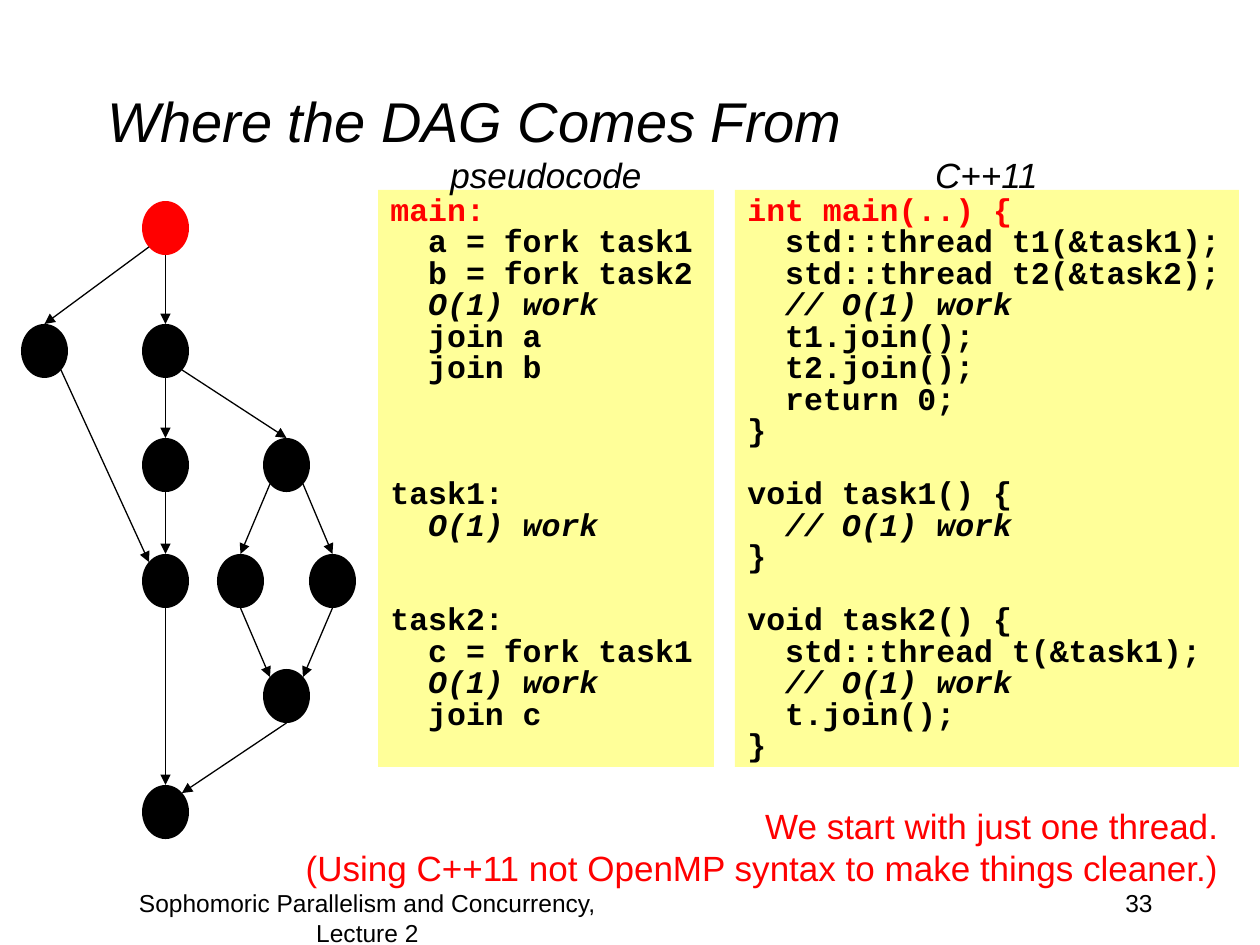
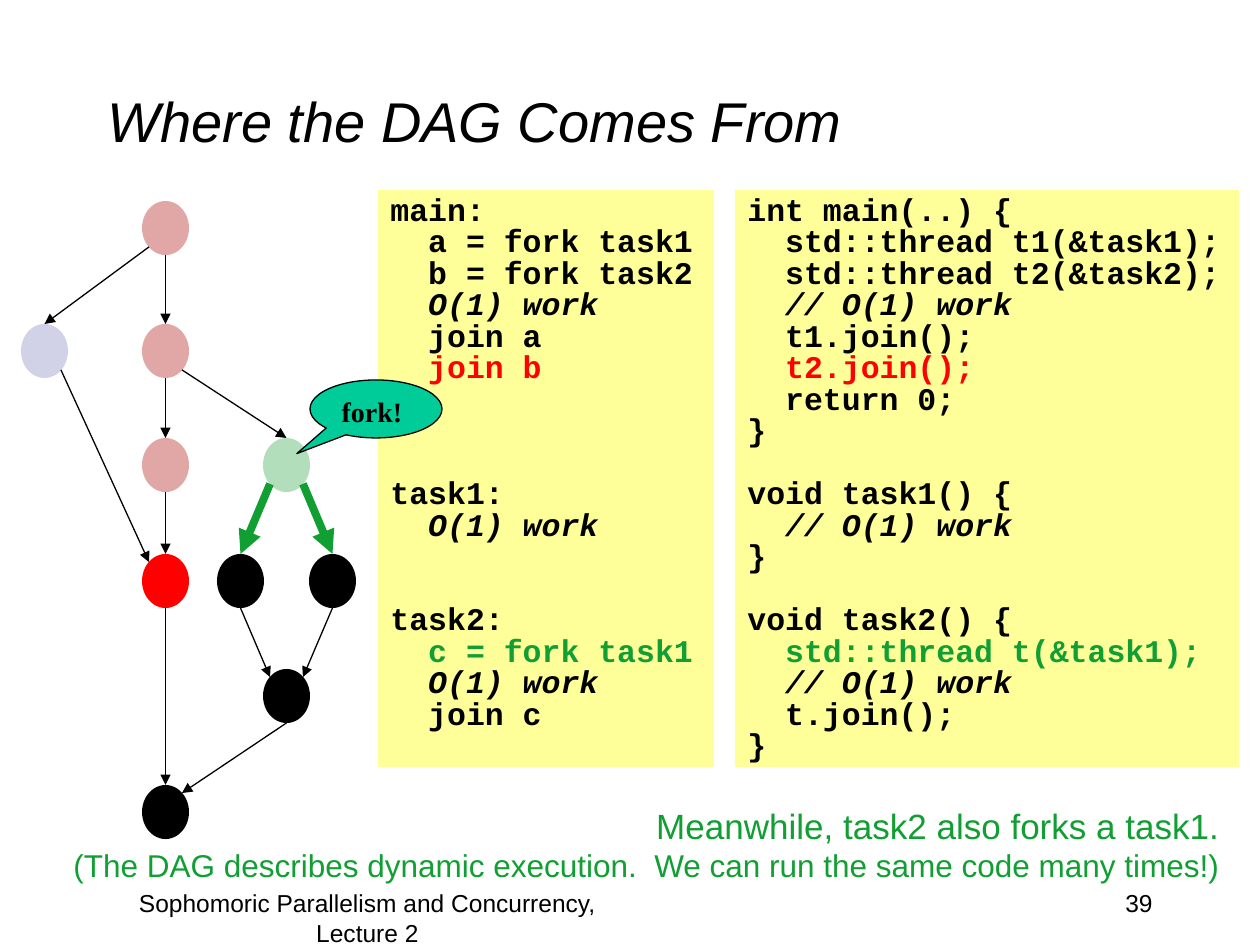
from pptx import Presentation
from pptx.dml.color import RGBColor
from pptx.enum.shapes import MSO_CONNECTOR, MSO_SHAPE
from pptx.enum.text import MSO_ANCHOR, PP_ALIGN
from pptx.oxml.ns import qn
from pptx.util import Emu, Pt
from lxml.etree import SubElement

PX = 914400 / 126
COLORS = {
    "black": "000000", "red": "FF0000", "green": "119F33", "code": "FFFF99",
    "done main": "E1A7A7", "done task1": "D1D1E7", "done task2": "B2DEBC",
    "callout": "00CC99",
}
CODE_SIZE = 18
INDENT = Pt(21.6)  # two Courier New characters at 18 pt

# Code panels: (left, width, code); blank lines become paragraph spacing
PANELS = [
    (378, 336, """main:
  a = fork task1
  b = fork task2
  O(1) work
  join a
  join b



task1:
  O(1) work


task2:
  c = fork task1
  O(1) work
  join c"""),
    (735, 504, """int main(..) {
  std::thread t1(&task1);
  std::thread t2(&task2);
  // O(1) work
  t1.join();
  t2.join();
  return 0;
}

void task1() {
  // O(1) work
}

void task2() {
  std::thread t(&task1);
  // O(1) work
  t.join();
}"""),
]

# DAG: left and top of each node, and where an edge can touch a node
NODE_WIDTH, NODE_HEIGHT = 47, 54
NODES = {
    "main": (142, 201), "fork b": (142, 324), "task1": (21, 324),
    "work": (142, 438), "join a": (142, 554), "join b": (142, 785),
    "task2": (263, 438), "task2 work": (217, 554), "inner task1": (309, 554),
    "join c": (263, 669),
}
SITES = {
    "top": (0.5, 0), "bottom": (0.5, 1), "top left": (0.15, 0.15),
    "top right": (0.85, 0.15), "bottom left": (0.15, 0.85),
    "bottom right": (0.85, 0.85),
}
EDGES = [
    ("main", "bottom left", "task1", "top"),
    ("main", "bottom", "fork b", "top"),
    ("task1", "bottom right", "join a", "top left"),
    ("fork b", "bottom", "work", "top"),
    ("work", "bottom", "join a", "top"),
    ("join a", "bottom", "join b", "top"),
    ("fork b", "bottom right", "task2", "top"),
    ("task2", "bottom left", "task2 work", "top"),
    ("task2", "bottom right", "inner task1", "top"),
    ("task2 work", "bottom", "join c", "top left"),
    ("inner task1", "bottom", "join c", "top right"),
    ("join c", "bottom", "join b", "top right"),
]

# What differs from slide to slide
STEPS = [
    {
        "number": "33",
        "nodes": {"main": "red"},
        "bold edges from": None,
        "code": {"main:": "red", "int main(..) {": "red"},
        "caption": [("We start with just one thread.", 20),
                    ("(Using C++11 not OpenMP syntax to make things cleaner.)", 20)],
        "caption box": (287, 798, 944, 97),
        "caption color": "red",
        "headings": [("pseudocode", (437, 147, 218, 55)), ("C++11", (922, 147, 129, 55))],
        "callout": None,
    },
    {
        "number": "39",
        "nodes": {"main": "done main", "fork b": "done main", "work": "done main",
                  "task1": "done task1", "task2": "done task2", "join a": "red"},
        "bold edges from": "task2",
        "code": {"join b": "red", "t2.join();": "red",
                 "c = fork task1": "green", "std::thread t(&task1);": "green"},
        "caption": [("Meanwhile, task2 also forks a task1.", 20),
                    ("(The DAG describes dynamic execution.  "
                     "We can run the same code many times!)", 18)],
        "caption box": (21, 798, 1211, 93),
        "caption color": "green",
        "headings": [],
        "callout": "fork!",
    },
]


def add_block(slide, box, kind=None, fill=None):
    """Add a text box, or a filled preset shape when a kind is given."""
    place = [Emu(round(value * PX)) for value in box]
    if kind is None:
        shape = slide.shapes.add_textbox(*place)
    else:
        shape = slide.shapes.add_shape(kind, *place)
        shape.shadow.inherit = False
        shape.fill.solid()
        shape.fill.fore_color.rgb = RGBColor.from_string(COLORS[fill])
        shape.line.fill.background()
    shape.text_frame.word_wrap = True
    shape.text_frame.vertical_anchor = MSO_ANCHOR.TOP
    return shape


def add_line(shape, text, size, color="black", align=PP_ALIGN.LEFT,
             font="Arial", italic=False, bold=False):
    """Write one paragraph, using the empty first one if it is free."""
    frame = shape.text_frame
    paragraph = frame.add_paragraph() if frame.text else frame.paragraphs[0]
    paragraph.text = text
    paragraph.alignment = align
    paragraph.font.name = font
    paragraph.font.size = Pt(size)
    paragraph.font.italic = italic
    paragraph.font.bold = bold
    paragraph.font.color.rgb = RGBColor.from_string(COLORS[color])
    return paragraph


presentation = Presentation()
presentation.slide_width = Emu(round(1260 * PX))
presentation.slide_height = Emu(round(945 * PX))

for step in STEPS:
    slide = presentation.slides.add_slide(presentation.slide_layouts[6])

    # Title and footer
    title = add_block(slide, (95, 42, 1071, 157))
    title.text_frame.vertical_anchor = MSO_ANCHOR.MIDDLE
    add_line(title, "Where the DAG Comes From", 32, italic=True)
    number = add_block(slide, (903, 882, 262, 63))
    add_line(number, step["number"], 14, align=PP_ALIGN.RIGHT)
    footer = add_block(slide, (84, 882, 567, 63))
    add_line(footer, "Sophomoric Parallelism and Concurrency, Lecture 2", 14,
             align=PP_ALIGN.CENTER)

    # DAG nodes
    for name, (left, top) in NODES.items():
        add_block(slide, (left, top, NODE_WIDTH, NODE_HEIGHT), MSO_SHAPE.OVAL,
                  step["nodes"].get(name, "black"))

    # DAG edges
    for source, source_site, target, target_site in EDGES:
        ends = []
        for name, site in ((source, source_site), (target, target_site)):
            left, top = NODES[name]
            across, down = SITES[site]
            ends += [Emu(round((left + across * NODE_WIDTH) * PX)),
                     Emu(round((top + down * NODE_HEIGHT) * PX))]
        edge = slide.shapes.add_connector(MSO_CONNECTOR.STRAIGHT, *ends)
        bold = source == step["bold edges from"]
        edge.line.width = Pt(4.5 if bold else 0.75)
        edge.line.color.rgb = RGBColor.from_string(COLORS["green" if bold else "black"])
        SubElement(edge.line._get_or_add_ln(), qn("a:tailEnd"), type="triangle")
        SubElement(edge._element.spPr, qn("a:effectLst"))

    # Code panels
    for left, width, code in PANELS:
        panel = add_block(slide, (left, 190, width, 577), MSO_SHAPE.RECTANGLE, "code")
        blank_lines = 0
        for line in code.splitlines():
            text = line.strip()
            if not text:
                blank_lines += 1
                continue
            paragraph = add_line(panel, text, CODE_SIZE, step["code"].get(text, "black"),
                                 font="Courier New", italic="O(1)" in text, bold=True)
            paragraph.line_spacing = Pt(CODE_SIZE)
            paragraph.space_before = Pt(CODE_SIZE * blank_lines)
            if line != text:
                paragraph._p.get_or_add_pPr().set("marL", str(INDENT))
            blank_lines = 0

    # Caption, panel headings and callout
    caption = add_block(slide, step["caption box"])
    for text, size in step["caption"]:
        add_line(caption, text, size, step["caption color"], PP_ALIGN.RIGHT)
    for text, box in step["headings"]:
        heading = add_block(slide, box)
        heading.text_frame.word_wrap = False
        add_line(heading, text, 20, align=PP_ALIGN.CENTER, italic=True)
    if step["callout"]:
        callout = add_block(slide, (310, 380, 132, 58), MSO_SHAPE.OVAL_CALLOUT, "callout")
        callout.adjustments[0] = -0.6
        callout.adjustments[1] = 0.77
        callout.line.color.rgb = RGBColor.from_string(COLORS["black"])
        callout.line.width = Pt(0.75)
        add_line(callout, step["callout"], 16, font="Times New Roman", bold=True)

presentation.save("out.pptx")
